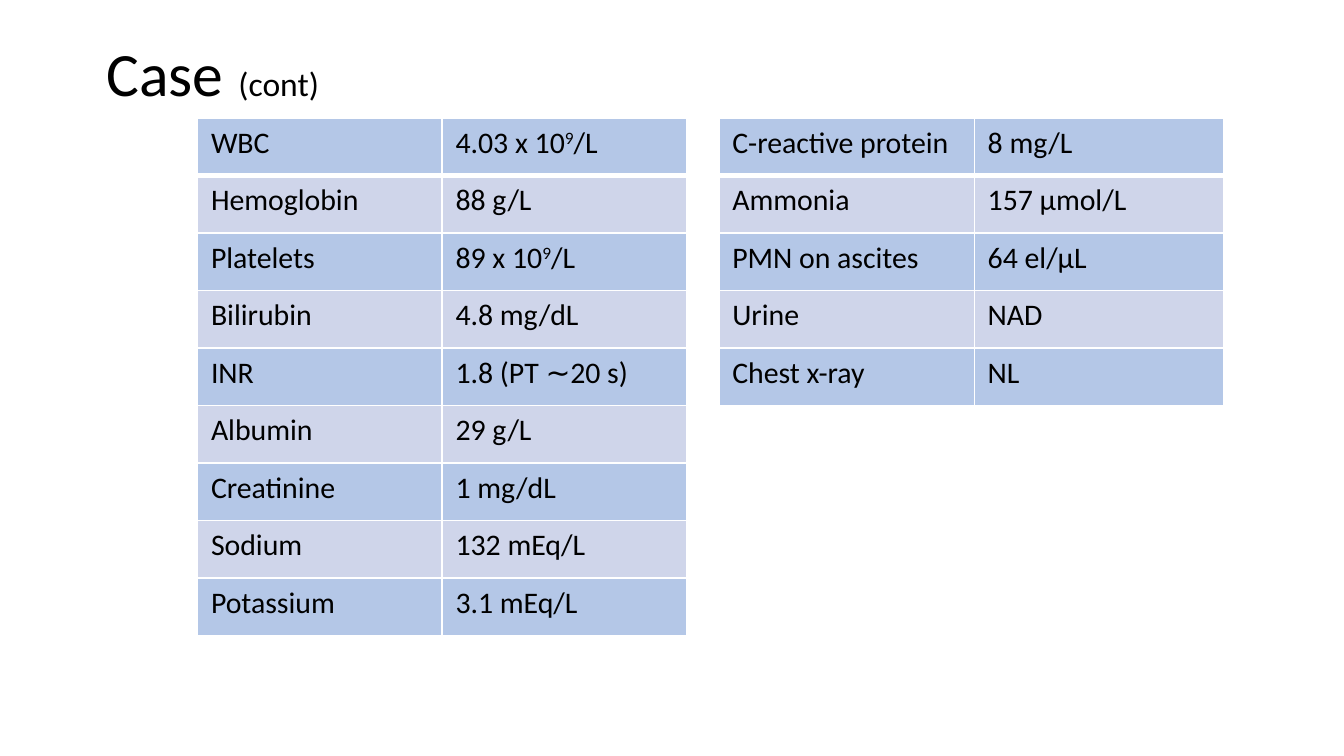
from dataclasses import dataclass
from lxml.etree import SubElement
from pptx import Presentation
from pptx.dml.color import RGBColor
from pptx.enum.text import MSO_ANCHOR, PP_ALIGN
from pptx.oxml.ns import qn
from pptx.util import Inches, Pt


@dataclass
class Theme:
    font: str = "Calibri"
    ink: str = "000000"
    paper: str = "FFFFFF"
    bands: tuple = ("B4C7E7", "CFD5EA")
    head: int = 33
    gap: int = 36
    note: int = 18
    cell: int = 16


theme = Theme()


def add_run(par, text, size, raised=False):
    run = par.add_run()
    run.text = text
    run.font.name = theme.font
    run.font.size = Pt(size)
    run.font.color.rgb = RGBColor.from_string(theme.ink)
    if raised:
        run.font._element.set("baseline", "30000")


def add_edge(cell, side, width):
    line = SubElement(cell._tc.get_or_add_tcPr(), qn(f"a:ln{side}"), w=str(Pt(width)))
    fill = SubElement(line, qn("a:solidFill"))
    SubElement(fill, qn("a:srgbClr"), val=theme.paper)


# Widescreen slide, 16 to 9
deck = Presentation()
deck.slide_width, deck.slide_height = Inches(10), Inches(10 * 9 / 16)
slide = deck.slides.add_slide(deck.slide_layouts[5])

# Title
title = slide.shapes.title
title.left, title.top = Inches(0.69), Inches(0.01)
title.width, title.height = Inches(8.62), Inches(1.09)
title.text_frame.vertical_anchor = MSO_ANCHOR.MIDDLE
par = title.text_frame.paragraphs[0]
par.alignment = PP_ALIGN.LEFT
par.line_spacing = 0.9
for text, size in (("Case", theme.head), (" ", theme.gap), ("(cont)", theme.note)):
    add_run(par, text, size)

# Lab results: name and value on each side of a blank column; ^ marks a raised part
rows = [
    ("WBC", "4.03 x 10^9^/L", "", "C-reactive protein", "8 mg/L"),
    ("Hemoglobin", "88 g/L", "", "Ammonia", "157 μmol/L"),
    ("Platelets", "89 x 10^9^/L", "", "PMN on ascites", "64 el/μL"),
    ("Bilirubin", "4.8 mg/dL", "", "Urine", "NAD"),
    ("INR", "1.8 (PT ∼20 s)", "", "Chest x-ray", "NL"),
    ("Albumin", "29 g/L", "", "", ""),
    ("Creatinine", "1 mg/dL", "", "", ""),
    ("Sodium", "132 mEq/L", "", "", ""),
    ("Potassium", "3.1 mEq/L", "", "", ""),
]
cols = (1.82, 1.82, 0.24, 1.9, 1.86)
high = 3.85 / len(rows)

# Table
frame = slide.shapes.add_table(len(rows), len(cols), Inches(1.47), Inches(0.88),
                               Inches(sum(cols)), Inches(high * len(rows)))
table = frame.table
table.first_row = table.horz_banding = False
for col, width in zip(table.columns, cols):
    col.width = Inches(width)

for i, row in enumerate(rows):
    table.rows[i].height = Inches(high)
    for j, text in enumerate(row):
        cell = table.cell(i, j)
        # The rule under the first row is thicker
        edges = {"L": 1, "R": 1, "T": 3 if i == 1 else 1, "B": 3 if i == 0 else 1}
        for side, width in edges.items():
            add_edge(cell, side, width)
        cell.fill.solid()
        tint = theme.bands[i % 2] if text else theme.paper
        cell.fill.fore_color.rgb = RGBColor.from_string(tint)
        if text:
            for k, part in enumerate(text.split("^")):
                add_run(cell.text_frame.paragraphs[0], part, theme.cell, k % 2 == 1)

deck.save("out.pptx")
